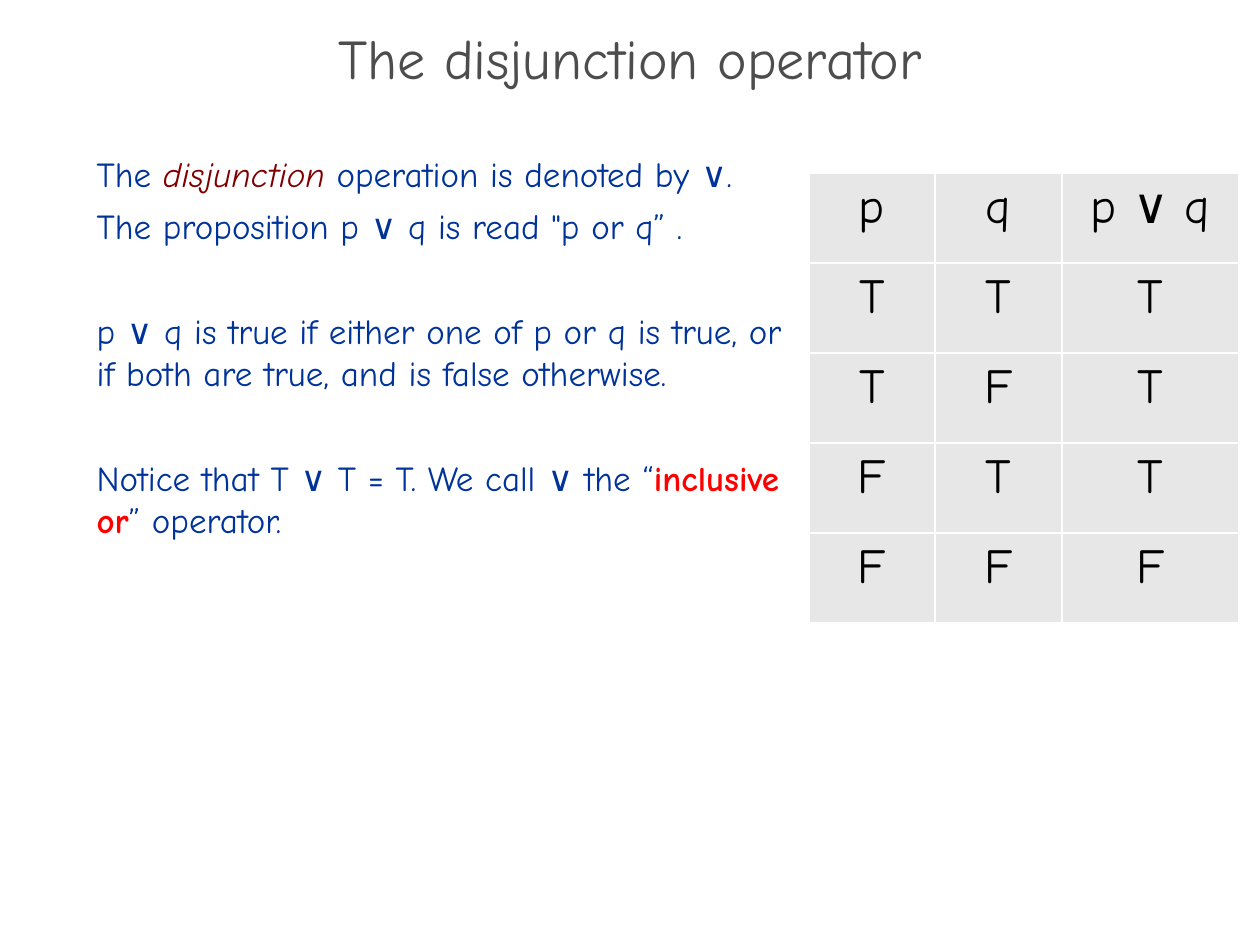
"""Build a slide on the disjunction operator with its truth table."""
from pptx import Presentation
from pptx.dml.color import RGBColor
from pptx.enum.text import MSO_ANCHOR, MSO_AUTO_SIZE, PP_ALIGN
from pptx.oxml.ns import qn
from pptx.util import Emu, Pt

CENTER, LEFT = PP_ALIGN.CENTER, PP_ALIGN.LEFT
MIDDLE, TOP = MSO_ANCHOR.MIDDLE, MSO_ANCHOR.TOP
NO_FIT = MSO_AUTO_SIZE.NONE

FONT = "Comic Neue"
COLORS = {"title": "4D4D4D", "body": "003399", "term": "800000",
          "emphasis": "FF0000", "cell": "E7E7E7", "value": "000000"}

TITLE = "The disjunction operator"
TERM = {"color": "term", "italic": True}
EMPHASIS = {"color": "emphasis", "bold": True}
EXPLANATION = [
    (0, [("The ", {}), ("disjunction", TERM), (" operation is denoted by ∨.", {})]),
    (0, [("The proposition p ∨ q is read \"p or q” .", {})]),
    (30, [("p ∨ q is true if either one of p or q is true, "
           "or if both are true, and is false otherwise.", {})]),
    (30, [("Notice that T ∨ T = T. We call ∨ the “", {}),
          ("inclusive or", EMPHASIS), ("” operator.", {})]),
]
TRUTH_TABLE = ["p", "q", "p ∨ q"], ["T", "T", "T"], ["T", "F", "T"], ["F", "T", "T"], ["F", "F", "F"]

TITLE_BOX = (0, 34, 1260, 63)
BODY_BOX = (84, 146, 720, 732)
TABLE_LEFT, TABLE_TOP = 809, 173
COLUMN_WIDTHS = (126, 127, 177)
ROW_HEIGHT = 90


def px(length):
    return Emu(round(length * 914400 / 126))


def write(paragraph, text, size=20, color="body", bold=False, italic=False):
    run = paragraph.add_run()
    run.text = text
    run.font.name = FONT
    run.font.size = Pt(size)
    run.font.bold = bold
    run.font.italic = italic
    run.font.color.rgb = RGBColor.from_string(COLORS[color])


def place(placeholder, box, anchor):
    placeholder.left, placeholder.top, placeholder.width, placeholder.height = map(px, box)
    frame = placeholder.text_frame
    frame.auto_size = NO_FIT
    frame.word_wrap = True
    frame.vertical_anchor = anchor
    return frame


def remove_bullet(paragraph):
    properties = paragraph._p.get_or_add_pPr()
    properties.set("marL", "0")
    properties.set("indent", "0")
    properties.append(properties.makeelement(qn("a:buNone"), {}))


def add_title(slide):
    heading = place(slide.shapes.title, TITLE_BOX, MIDDLE).paragraphs[0]
    heading.alignment = CENTER
    heading.line_spacing = 0.7
    write(heading, TITLE, size=32, color="title")


def add_explanation(slide):
    frame = place(slide.placeholders[1], BODY_BOX, TOP)
    for index, (gap, pieces) in enumerate(EXPLANATION):
        sentence = frame.add_paragraph() if index else frame.paragraphs[0]
        sentence.alignment = LEFT
        sentence.space_before = Pt(gap)
        sentence.space_after = Pt(6)
        remove_bullet(sentence)
        for text, style in pieces:
            write(sentence, text, **style)


def add_truth_table(slide):
    rows = len(TRUTH_TABLE)
    table = slide.shapes.add_table(
        rows, len(COLUMN_WIDTHS), px(TABLE_LEFT), px(TABLE_TOP),
        px(sum(COLUMN_WIDTHS)), px(ROW_HEIGHT * rows)).table
    table.first_row = table.horz_banding = False
    for column, width in zip(table.columns, COLUMN_WIDTHS):
        column.width = px(width)
    for row, values in zip(table.rows, TRUTH_TABLE):
        row.height = px(ROW_HEIGHT)
        for cell, value in zip(row.cells, values):
            cell.fill.solid()
            cell.fill.fore_color.rgb = RGBColor.from_string(COLORS["cell"])
            entry = cell.text_frame.paragraphs[0]
            entry.alignment = CENTER
            entry.space_before = Pt(5.6)
            write(entry, value, size=28, color="value")


def main():
    deck = Presentation()
    deck.slide_width, deck.slide_height = px(1260), px(945)
    slide = deck.slides.add_slide(deck.slide_layouts[1])
    add_title(slide)
    add_explanation(slide)
    add_truth_table(slide)
    deck.save("out.pptx")


if __name__ == "__main__":
    main()
